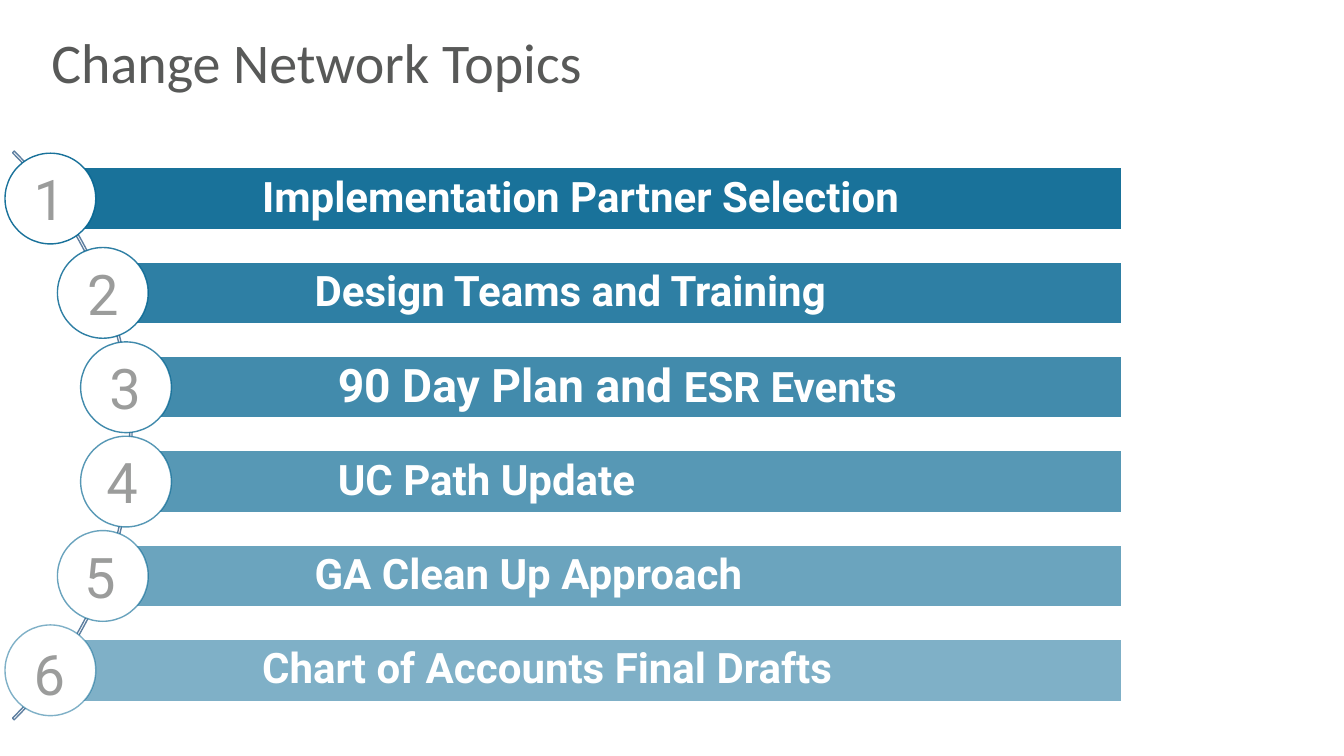
from lxml import etree
from pptx import Presentation
from pptx.dml.color import RGBColor
from pptx.enum.shapes import MSO_SHAPE
from pptx.enum.text import MSO_ANCHOR, MSO_AUTO_SIZE, PP_ALIGN
from pptx.oxml.ns import qn
from pptx.util import Inches, Pt

# Content
TITLE = "Change Network Topics"
# large lead text, text, bar left, number left, number top
TOPICS = [
    ("", "Implementation Partner Selection", 0.5, 0.18, 1.58),
    ("", "Design Teams and Training", 1.02, 0.71, 2.53),
    ("90 Day Plan and ", "ESR Events", 1.25, 0.93, 3.46),
    ("", "UC Path Update", 1.25, 0.9, 4.39),
    ("", "GA Clean Up Approach", 1.02, 0.68, 5.33),
    ("", "Chart of Accounts Final Drafts", 0.5, 0.18, 6.3),
]

# Style
BLUE = RGBColor(0x00, 0x63, 0x90)
STEEL = RGBColor(0x5E, 0x7F, 0xA0)
WHITE = RGBColor(0xFF, 0xFF, 0xFF)
DARK = RGBColor(0x58, 0x59, 0x58)
GREY = RGBColor(0x9B, 0x9C, 0x9B)
ARC, RECT, OVAL = MSO_SHAPE.BLOCK_ARC, MSO_SHAPE.RECTANGLE, MSO_SHAPE.OVAL
MIDDLE, BOTTOM = MSO_ANCHOR.MIDDLE, MSO_ANCHOR.BOTTOM
LEFT, CENTER = PP_ALIGN.LEFT, PP_ALIGN.CENTER

# Layout in inches
TOP, RIGHT, HIGH = 1.66, 11.13, 0.62
PITCH = (6.34 - TOP) / (len(TOPICS) - 1)
DISC = 0.9
INDENT = 2.1

prs = Presentation()
prs.slide_width, prs.slide_height = Inches(13.33), Inches(7.5)
slide = prs.slides.add_slide(prs.slide_layouts[5])
shapes = slide.shapes


def place(kind, x, y, w, h, fill, line, width):
    shape = shapes.add_shape(kind, Inches(x), Inches(y), Inches(w), Inches(h))
    shape.shadow.inherit = False
    if fill is None:
        shape.fill.background()
    else:
        shape.fill.solid()
        shape.fill.fore_color.rgb = fill
    shape.line.color.rgb = line
    shape.line.width = Pt(width)
    return shape


def fade(fill, share):
    """Set the opacity, in percent, of a solid fill or line colour."""
    color = next(fill.iter(qn("a:srgbClr")))
    etree.SubElement(color, qn("a:alpha")).set("val", str(share * 1000))


def style(font, name, size, color, bold=False):
    font.name, font.size, font.bold = name, Pt(size), bold
    font.color.rgb = color


# Title
title = shapes.title
title.left, title.top = Inches(0.41), Inches(0.41)
title.width, title.height = Inches(12.29), Inches(0.59)
frame = title.text_frame
frame.text = TITLE
frame.auto_size = MSO_AUTO_SIZE.NONE
frame.vertical_anchor = BOTTOM
para = frame.paragraphs[0]
para.alignment, para.line_spacing = LEFT, 0.9
style(para.runs[0].font, "Calibri", 40, DARK)

# Curve behind the numbers
arc = place(ARC, -6.67, 0.33, 7.98, 7.98, None, STEEL, 1)
for i, value in enumerate((189, 27, 0.003)):
    arc.adjustments[i] = value

# Topic bars and discs
for i, (lead, text, x, _, _) in enumerate(TOPICS):
    y, share = TOP + i * PITCH, 90 - 8 * i
    bar = place(RECT, x, y, RIGHT - x, HIGH, BLUE, WHITE, 1.5)
    fade(bar.fill._xPr.find(qn("a:solidFill")), share)
    frame = bar.text_frame
    frame.margin_left = Inches(INDENT)
    frame.margin_right = frame.margin_top = frame.margin_bottom = Inches(0.09)
    frame.vertical_anchor = MIDDLE
    para = frame.paragraphs[0]
    para.alignment, para.line_spacing = LEFT, 0.9
    for part, size in ((lead, 33), (text, 30)):
        if part:
            run = para.add_run()
            run.text = part
            style(run.font, "Roboto", size, WHITE, True)

    disc = place(OVAL, x - DISC / 2, y + (HIGH - DISC) / 2, DISC, DISC,
                 WHITE, BLUE, 1)
    fade(disc.line._ln, share)

# Numbers
for i, (_, _, _, x, y) in enumerate(TOPICS, 1):
    box = shapes.add_textbox(Inches(x), Inches(y), Inches(0.62), Inches(0.77))
    frame = box.text_frame
    frame.word_wrap = True
    frame.text = str(i)
    para = frame.paragraphs[0]
    para.alignment = CENTER
    style(para.runs[0].font, "Roboto", 40, GREY)

prs.save("out.pptx")
